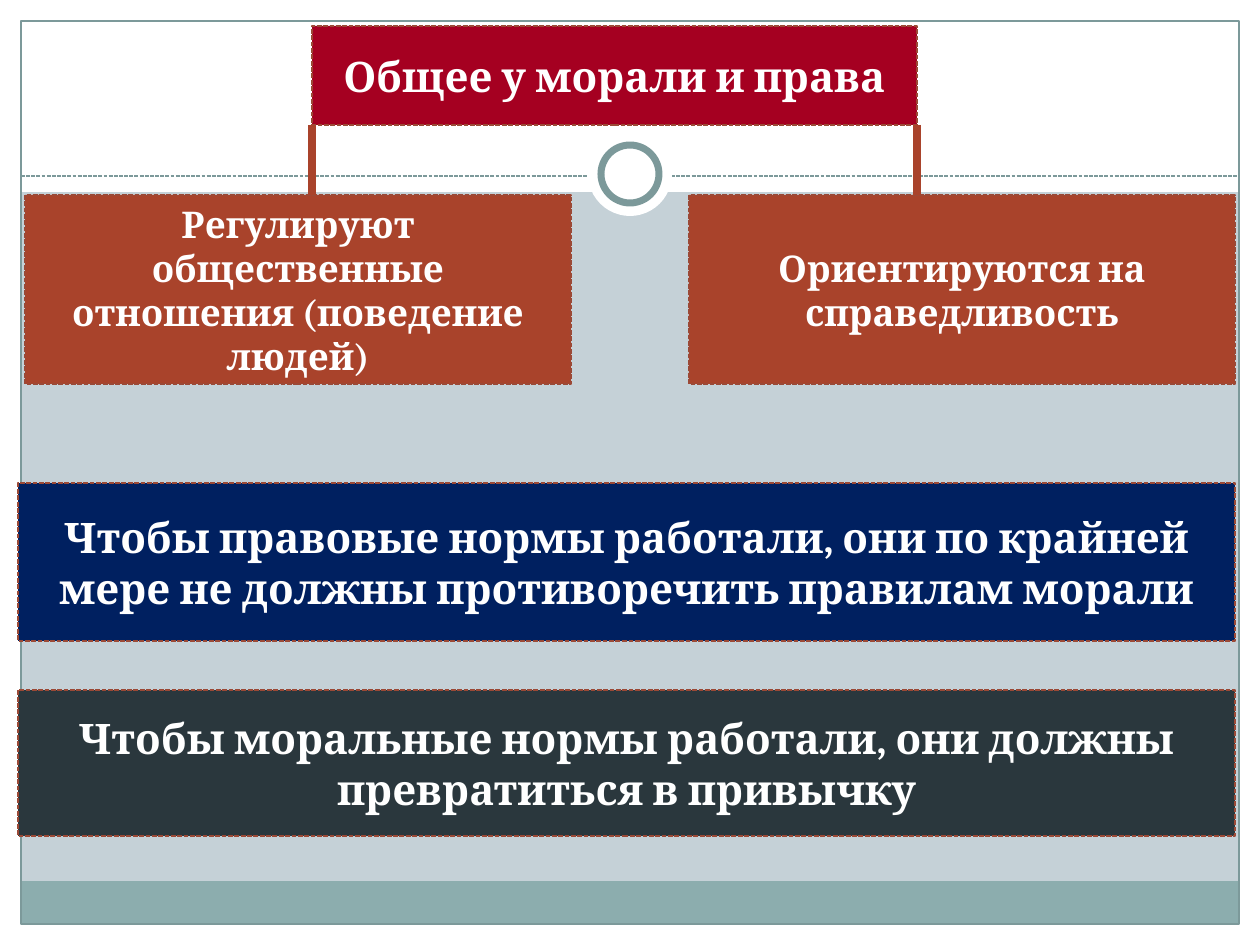
from dataclasses import dataclass

from pptx import Presentation
from pptx.dml.color import RGBColor
from pptx.enum.dml import MSO_LINE
from pptx.enum.shapes import MSO_CONNECTOR, MSO_SHAPE
from pptx.enum.text import MSO_ANCHOR, PP_ALIGN
from pptx.oxml.ns import qn
from pptx.util import Emu, Pt

SCALE = 914400 / 126  # EMU in one px
WIDE, HIGH = 1260, 945
EDGE = 21
COLORS = {
    "back": "C5D1D7", "white": "FFFFFF", "teal": "8CADAE", "gray": "7C999A",
    "red": "A50021", "rust": "A9432B", "trim": "9B4936",
    "navy": "002060", "slate": "2A373D",
}
FONT = {"name": "Cambria", "bold": True}
FRAME = {"word_wrap": True, "vertical_anchor": MSO_ANCHOR.MIDDLE}


@dataclass
class Part:
    x: int
    y: int
    w: int
    h: int
    fill: str = ""
    line: str = ""
    width: float = 0.75
    kind: MSO_SHAPE = MSO_SHAPE.RECTANGLE


@dataclass
class Card:
    x: int
    y: int
    w: int
    h: int
    fill: str
    size: int
    text: str


@dataclass
class Link:
    x1: int
    y1: int
    x2: int
    y2: int
    color: str
    width: float
    dash: MSO_LINE | None = None


def px(n: int) -> Emu:
    return Emu(round(n * SCALE))


def rgb(name: str) -> RGBColor:
    return RGBColor.from_string(COLORS[name])


def apply(item, values: dict) -> None:
    for key, value in values.items():
        setattr(item, key, value)


def paint(shape, fill: str, line: str, width: float) -> None:
    if fill:
        shape.fill.solid()
        shape.fill.fore_color.rgb = rgb(fill)
    else:
        shape.fill.background()
    if line:
        shape.line.color.rgb = rgb(line)
        shape.line.width = Pt(width)
    else:
        shape.line.fill.background()


def add_part(slide, part: Part) -> None:
    shape = slide.shapes.add_shape(
        part.kind, px(part.x), px(part.y), px(part.w), px(part.h))
    shape.shadow.inherit = False
    paint(shape, part.fill, part.line, part.width)


def style_card(shape, card: Card) -> None:
    apply(shape, {"left": px(card.x), "top": px(card.y),
                  "width": px(card.w), "height": px(card.h)})
    paint(shape, card.fill, "trim", 0.9)
    shape.line.dash_style = MSO_LINE.SQUARE_DOT
    frame = shape.text_frame
    apply(frame, FRAME)
    frame.text = card.text
    para = frame.paragraphs[0]
    para.alignment = PP_ALIGN.CENTER
    font = para.runs[0].font
    apply(font, FONT | {"size": Pt(card.size)})
    font.color.rgb = rgb("white")


def add_card(slide, card: Card) -> None:
    shape = slide.shapes.add_shape(MSO_SHAPE.RECTANGLE, 0, 0, 0, 0)
    shape.shadow.inherit = False
    style_card(shape, card)


def add_link(slide, link: Link) -> None:
    line = slide.shapes.add_connector(
        MSO_CONNECTOR.STRAIGHT,
        px(link.x1), px(link.y1), px(link.x2), px(link.y2))
    line.line.color.rgb = rgb(link.color)
    line.line.width = Pt(link.width)
    if link.dash:
        line.line.dash_style = link.dash
    props = line.element.spPr
    props.append(props.makeelement(qn("a:effectLst"), {}))


INNER = WIDE - 2 * EDGE
MARGINS = [
    Part(0, HIGH - EDGE, WIDE, EDGE, "white"),
    Part(0, 0, WIDE, 192, "white"),
    Part(0, 0, EDGE, HIGH, "white"),
    Part(WIDE - EDGE, 0, EDGE, HIGH, "white"),
    Part(EDGE, 881, INNER, 43, "teal"),
    Part(EDGE, EDGE, INNER, HIGH - 2 * EDGE, "", "gray"),
]
RULE = Link(EDGE, 176, WIDE - EDGE, 176, "gray", 0.75, MSO_LINE.SQUARE_DOT)
RING = [
    Part(588, 132, 84, 84, "white", kind=MSO_SHAPE.OVAL),
    Part(601, 145, 58, 58, "white", "gray", 4, MSO_SHAPE.OVAL),
]
HEAD = Card(312, 26, 605, 99, "red", 24, "Общее у морали и права")
CARDS = [
    Card(25, 195, 546, 189, "rust", 21,
         "Регулируют общественные отношения (поведение людей)"),
    Card(689, 195, 546, 189, "rust", 21, "Ориентируются на справедливость"),
    Card(18, 483, 1217, 158, "navy", 24,
         "Чтобы правовые нормы работали, они по крайней мере "
         "не должны противоречить правилам морали"),
    Card(18, 690, 1217, 146, "slate", 24,
         "Чтобы моральные нормы работали, они должны "
         "превратиться в привычку"),
]


def main() -> None:
    deck = Presentation()
    apply(deck, {"slide_width": px(WIDE), "slide_height": px(HIGH)})
    slide = deck.slides.add_slide(deck.slide_layouts[5])
    slide.background.fill.solid()
    slide.background.fill.fore_color.rgb = rgb("back")

    # Page frame, dashed rule and ring
    for part in MARGINS:
        add_part(slide, part)
    add_link(slide, RULE)
    for part in RING:
        add_part(slide, part)

    # Title, raised above the page frame
    title = slide.shapes.title
    style_card(title, HEAD)
    title.element.getparent().append(title.element)

    # Shared traits and conclusions
    for card in CARDS:
        add_card(slide, card)

    # Links from the title's lower corners
    for x in (HEAD.x, HEAD.x + HEAD.w):
        add_link(slide, Link(x, HEAD.y + HEAD.h, x, CARDS[0].y, "rust", 4.5))

    deck.save("out.pptx")


if __name__ == "__main__":
    main()
